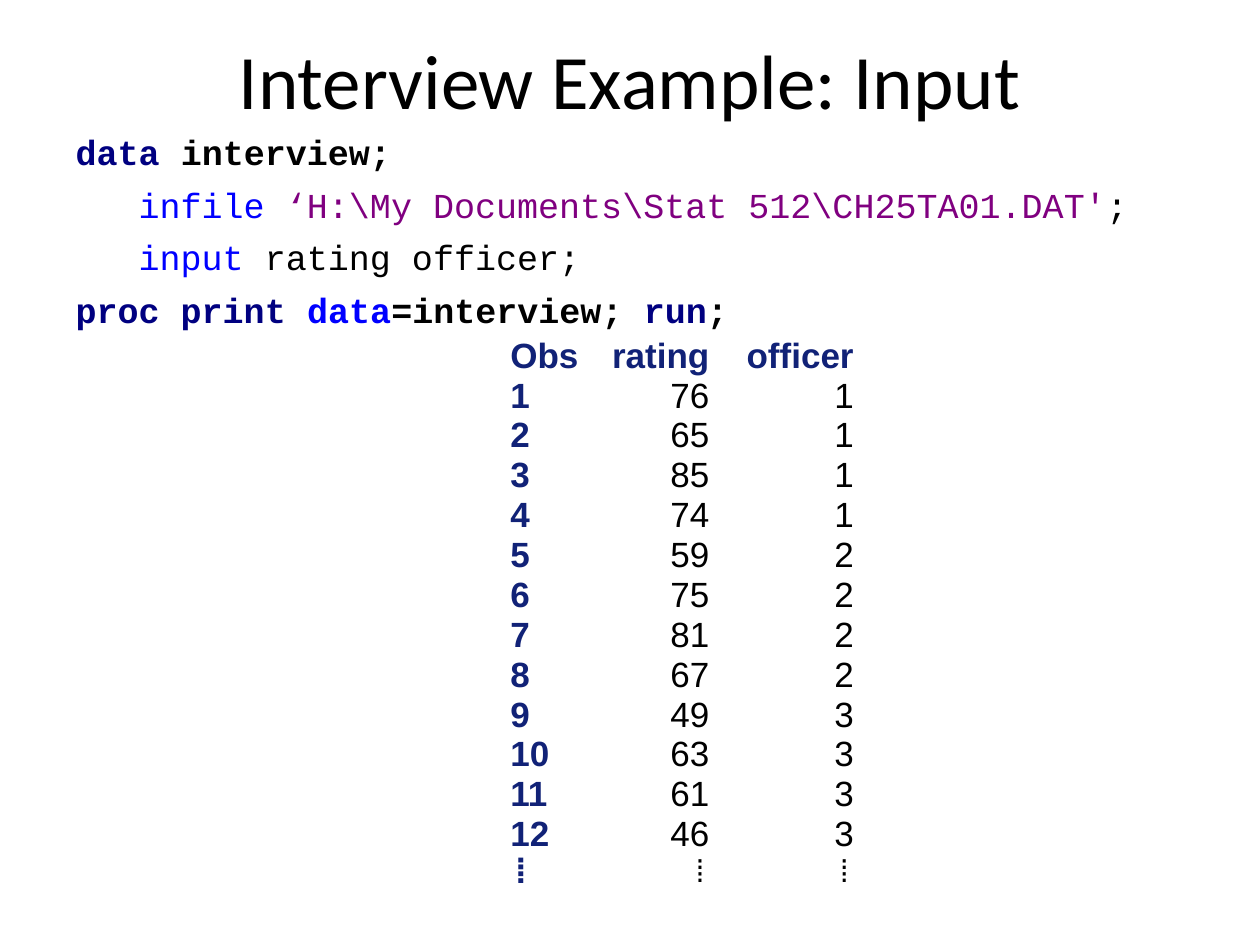
from lxml import etree
from pptx import Presentation
from pptx import util as u
from pptx.dml.color import RGBColor
from pptx.enum import text
from pptx.oxml.ns import qn

Pt = u.Pt
AL = text.PP_ALIGN
MIDDLE = text.MSO_ANCHOR.MIDDLE
BLACK, NAVY, BLUE, PURPLE, HEAD = "000000", "000080", "0000FF", "800080", "112277"
NO_STYLE = "{2D5ABB26-0587-4C30-8999-92F81FD0307C}"

CODE = [
    (0, True, [("data", NAVY), (" interview;", BLACK)]),
    (36, False, [("infile ", BLUE),
                 ("‘H:\\My Documents\\Stat 512\\CH25TA01.DAT'", PURPLE),
                 (";", BLACK)]),
    (36, False, [("input", BLUE), (" rating officer;", BLACK)]),
    (0, True, [("proc print ", NAVY), ("data", BLUE), ("=interview; ", BLACK),
               ("run", NAVY), (";", BLACK)]),
]
RATINGS = [76, 65, 85, 74, 59, 75, 81, 67, 49, 63, 61, 46]
PER_OFFICER = 4


def color(hex_):
    return RGBColor.from_string(hex_)


def apply(obj, **fmt):
    for name, value in fmt.items():
        setattr(obj, name, value)


def add_run(p, txt, hex_, **fmt):
    r = p.add_run()
    r.text = txt
    apply(r.font, **fmt)
    r.font.color.rgb = color(hex_)


def place(sp, box):
    apply(sp, **dict(zip(("left", "top", "width", "height"), map(Pt, box))))


def add_title(s, box, txt):
    sp = s.shapes.title
    place(sp, box)
    tf = sp.text_frame
    apply(tf, vertical_anchor=MIDDLE, word_wrap=True)
    p = tf.paragraphs[0]
    p.alignment = AL.CENTER
    add_run(p, txt, BLACK, size=Pt(44), name="Calibri")


def add_code(s, box, lines):
    sp = s.placeholders[1]
    place(sp, box)
    tf = sp.text_frame
    apply(tf, word_wrap=True, vertical_anchor=text.MSO_ANCHOR.TOP)
    for i, (indent, bold, runs) in enumerate(lines):
        p = tf.paragraphs[0] if i == 0 else tf.add_paragraph()
        apply(p, line_spacing=1.2, space_before=Pt(1.4), alignment=AL.LEFT)
        pPr = p._p.get_or_add_pPr()
        pPr.set("marL", str(Pt(indent)))
        pPr.set("indent", "0")
        etree.SubElement(pPr, qn("a:buNone"))
        for txt, hex_ in runs:
            add_run(p, txt, hex_, size=Pt(20), name="Courier New", bold=bold)


def add_listing(s, box, rows, widths, heights):
    tbl = s.shapes.add_table(len(rows), len(widths), *map(Pt, box)).table
    apply(tbl, first_row=False, horz_banding=False)
    tbl._tbl.tblPr.find(qn("a:tableStyleId")).text = NO_STYLE
    for col, w in zip(tbl.columns, widths):
        col.width = Pt(w)
    for i, (row, h) in enumerate(zip(rows, heights)):
        tbl.rows[i].height = Pt(h)
        last = i == len(rows) - 1
        for j, value in enumerate(row):
            cell = tbl.cell(i, j)
            cell.fill.background()
            apply(cell, vertical_anchor=MIDDLE, margin_left=Pt(3.6),
                  margin_right=Pt(3.6), margin_top=0, margin_bottom=0)
            p = cell.text_frame.paragraphs[0]
            p.alignment = AL.RIGHT if j else AL.LEFT
            heading = i == 0 or j == 0
            add_run(p, str(value), HEAD if heading else BLACK, bold=heading,
                    size=Pt(18 if last and j else 20),
                    name="Courier New" if last else "Arial")


def main():
    prs = Presentation()
    apply(prs, slide_width=Pt(720), slide_height=Pt(540))
    s = prs.slides.add_slide(prs.slide_layouts[1])
    add_title(s, (36, 0, 648, 90), "Interview Example: Input")
    add_code(s, (36, 66, 648, 138), CODE)
    rows = [("Obs", "rating", "officer")]
    rows += [(n + 1, v, n // PER_OFFICER + 1) for n, v in enumerate(RATINGS)]
    rows.append(("⁞",) * 3)
    heights = [22.8] * (len(rows) - 1) + [21.6]
    widths = [55, 66, 82.5]
    add_listing(s, (288, 192, sum(widths), sum(heights)), rows, widths, heights)
    prs.save("out.pptx")


if __name__ == "__main__":
    main()
